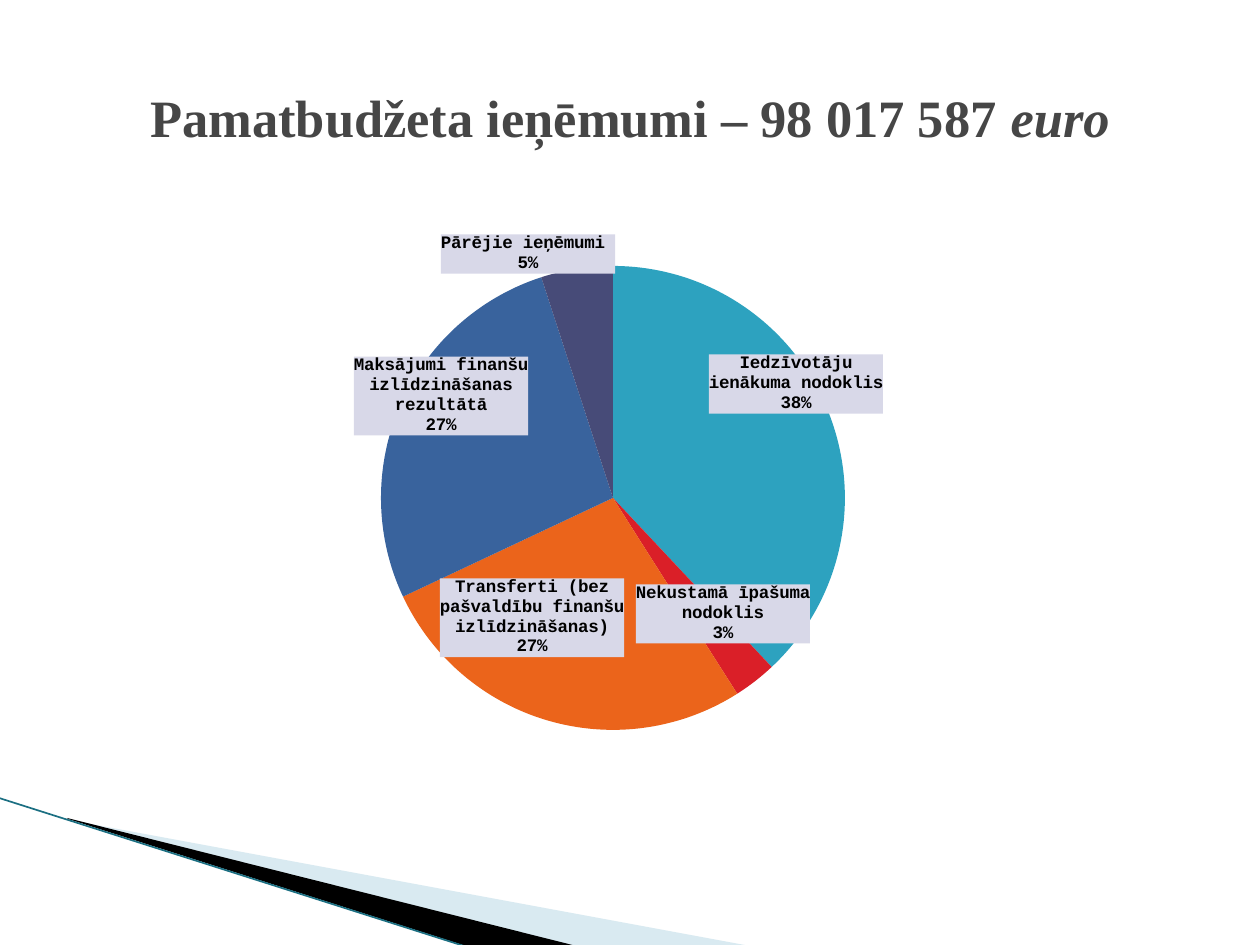
from dataclasses import dataclass
from math import cos, pi, sin

from pptx import Presentation
from pptx.chart.data import CategoryChartData as Data
from pptx.dml.color import RGBColor as Rgb
from pptx.enum.chart import XL_CHART_TYPE as Kind
from pptx.enum.shapes import MSO_CONNECTOR as Link
from pptx.enum.text import MSO_ANCHOR as Anchor, PP_ALIGN as Align
from pptx.oxml import parse_xml as to_xml
from pptx.oxml.ns import nsdecls, qn
from pptx.util import Pt

PX = 914400 // 126
NS = nsdecls("c", "a")


@dataclass(frozen=True)
class Theme:
    title: str = "464646"
    ink: str = "000000"
    label: str = "D8D8E8"
    pale: str = "A0CBDC"
    edge: str = "1B6F82"
    serif: str = "Times New Roman"
    mono: str = "Courier New"
    head: int = 30
    small: int = 10


LOOK = Theme()
SLICES = [
    ("Iedzīvotāju ienākuma nodoklis", 38, "2DA2BF", (733, 180)),
    ("Nekustamā īpašuma nodoklis", 3, "DA1F28", (660, 410)),
    ("Transferti (bez pašvaldību finanšu izlīdzināšanas)", 27, "EB641B", (469, 414)),
    ("Maksājumi finanšu izlīdzināšanas rezultātā", 27, "39639D", (378, 192)),
    ("Pārējie ieņēmumi ", 5, "474B78", (465, 50)),
]


def scale(box):
    return [n * PX for n in box]


def wedge(slide, left, top, points, color, alpha=100):
    spots = [(left + x, top + y) for x, y in points]
    form = slide.shapes.build_freeform(*spots[0], scale=PX)
    form.add_line_segments(spots[1:], close=True)
    shape = form.convert_to_shape()
    shape.shadow.inherit = False
    shape.line.fill.background()
    shape.fill.solid()
    shape.fill.fore_color.rgb = Rgb.from_string(color)
    if alpha < 100:
        tint = shape._element.spPr.find(qn("a:solidFill"))[0]
        tint.append(to_xml(f'<a:alpha {NS} val="{alpha * 1000}"/>'))


def swoosh(slide, box):
    left, top, wide, high = box
    wedge(slide, left, top, [(70, 22), (wide, high - 1), (576, high - 1), (70, 21)],
          LOOK.pale, 40)
    wedge(slide, left, top, [(68, 20), (577, high - 1), (470, high), (69, 21)], LOOK.ink)
    line = slide.shapes.add_connector(
        Link.STRAIGHT, *scale((left, top, left + 468, top + high)))
    line.line.color.rgb = Rgb.from_string(LOOK.edge)
    line.line.width = Pt(0.95)
    line._element.spPr.append(to_xml(f"<a:effectLst {NS}/>"))


def title(slide, box):
    frame = slide.shapes.add_textbox(*scale(box)).text_frame
    frame.word_wrap = True
    frame.vertical_anchor = Anchor.MIDDLE
    para = frame.paragraphs[0]
    para.alignment = Align.CENTER
    para.add_run().text = "Pamatbudžeta ieņēmumi – 98 017 587 "
    euro = para.add_run()
    euro.text = "euro"
    euro.font.italic = True
    font = para.font
    font.name, font.size, font.bold = LOOK.serif, Pt(LOOK.head), True
    font.color.rgb = Rgb.from_string(LOOK.title)


def layout(x, y, mode="", size=""):
    return (f'<c:layout {NS}><c:manualLayout>{mode}<c:x val="{x:.4f}"/>'
            f'<c:y val="{y:.4f}"/>{size}</c:manualLayout></c:layout>')


def label(index, x, y):
    flags = "".join(
        f'<c:show{name} val="{int(name in ("CatName", "Percent"))}"/>'
        for name in ("LegendKey", "Val", "CatName", "SerName", "Percent", "BubbleSize"))
    return to_xml(
        f'<c:dLbl {NS}><c:idx val="{index}"/>{layout(x, y)}'
        '<c:numFmt formatCode="0%" sourceLinked="0"/>'
        f'<c:spPr><a:solidFill><a:srgbClr val="{LOOK.label}"/></a:solidFill></c:spPr>'
        f'<c:txPr><a:bodyPr/><a:p><a:pPr><a:defRPr sz="{LOOK.small * 100}" b="1">'
        f'<a:solidFill><a:srgbClr val="{LOOK.ink}"/></a:solidFill>'
        f'<a:latin typeface="{LOOK.mono}"/></a:defRPr></a:pPr></a:p></c:txPr>'
        f'<c:dLblPos val="ctr"/>{flags}<c:separator>\n</c:separator></c:dLbl>')


def pie(slide, box):
    _, _, wide, high = box
    data = Data()
    data.categories = [name for name, *_ in SLICES]
    data.add_series("Series 1", [part[1] for part in SLICES])
    chart = slide.shapes.add_chart(Kind.PIE, *scale(box), data).chart
    chart.has_title = chart.has_legend = False
    chart.font.name, chart.font.size = LOOK.mono, Pt(LOOK.small)
    chart.font.color.rgb = Rgb.from_string(LOOK.ink)

    left, top, side = 318, 62, 464
    area = chart._chartSpace.chart.plotArea
    for old in area.findall(qn("c:layout")):
        area.remove(old)
    mode = ('<c:layoutTarget val="inner"/>'
            '<c:xMode val="edge"/><c:yMode val="edge"/>')
    size = f'<c:w val="{side / wide:.4f}"/><c:h val="{side / high:.4f}"/>'
    area.insert(0, to_xml(layout(left / wide, top / high, mode, size)))

    plot = chart.plots[0]
    plot.vary_by_categories = True
    series = plot.series[0]
    tags = series.data_labels
    tags.show_value = False
    tags.show_category_name = tags.show_percentage = True
    tags.font.bold = True
    total, done = sum(part[1] for part in SLICES), 0
    for index, (_, value, color, (x, y)) in enumerate(SLICES):
        fill = series.points[index].format.fill
        fill.solid()
        fill.fore_color.rgb = Rgb.from_string(color)
        turn = 2 * pi * (done + value / 2) / total
        done += value
        mid_x = left + side / 2 + side / 4 * sin(turn)
        mid_y = top + side / 2 - side / 4 * cos(turn)
        tags._element.insert(index, label(index, (x - mid_x) / wide, (y - mid_y) / high))


def main():
    deck = Presentation()
    deck.slide_width, deck.slide_height = scale((1260, 945))
    slide = deck.slides.add_slide(deck.slide_layouts[6])
    swoosh(slide, (-1, 798, 751, 149))
    title(slide, (63, 38, 1134, 157))
    pie(slide, (63, 204, 1134, 624))
    deck.save("out.pptx")


if __name__ == "__main__":
    main()
